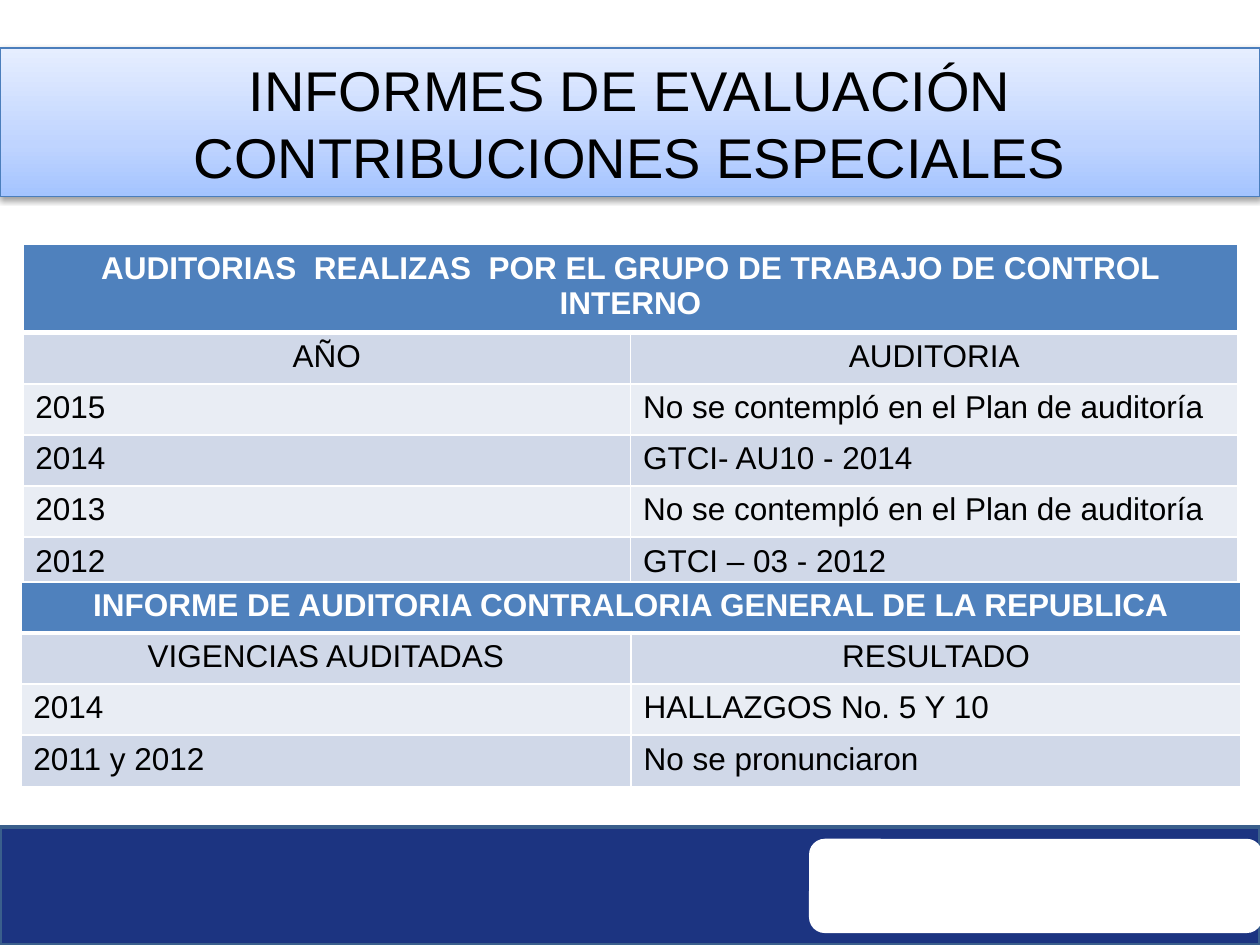
import pptx
import pptx.dml.color
import pptx.enum.shapes
import pptx.enum.text
import pptx.oxml
import pptx.oxml.ns
import pptx.util
from pptx.util import Cm

RGBColor = pptx.dml.color.RGBColor
Align = pptx.enum.text.PP_ALIGN
Shape = pptx.enum.shapes.MSO_SHAPE

WHITE = RGBColor(0xFF, 0xFF, 0xFF)
BLACK = RGBColor(0x00, 0x00, 0x00)
NAVY = RGBColor(0x1C, 0x34, 0x81)
STEEL = RGBColor(0x3A, 0x5F, 0x8C)
TITLE_LINE = RGBColor(0x4B, 0x7E, 0xBC)
HEADER = RGBColor(0x4F, 0x81, 0xBD)
BAND_DARK = RGBColor(0xD0, 0xD8, 0xE8)
BAND_LIGHT = RGBColor(0xE9, 0xED, 0xF4)
TITLE_STOPS = [
    (0, RGBColor(0xA4, 0xC4, 0xFF)),
    (35, RGBColor(0xBF, 0xD4, 0xFF)),
    (100, RGBColor(0xE6, 0xEE, 0xFF)),
]
NAMESPACE = pptx.oxml.ns.nsdecls("a")


def write_text(text_frame, text, size=18, color=BLACK, bold=False, align=Align.LEFT):
    paragraph = text_frame.paragraphs[0]
    paragraph.alignment = align
    run = paragraph.add_run()
    run.text = text
    run.font.name = "Arial"
    run.font.size = pptx.util.Pt(size)
    run.font.bold = bold
    run.font.color.rgb = color


class SlideBuilder:
    """Holds the current slide and draws its elements in one style."""

    def __init__(self, slide):
        self.slide = slide

    def add_box(self, kind, left, top, width, height, fill=None, line=None, line_width=0):
        shape = self.slide.shapes.add_shape(kind, Cm(left), Cm(top), Cm(width), Cm(height))
        shape.shadow.inherit = False
        if fill is not None:
            shape.fill.solid()
            shape.fill.fore_color.rgb = fill
        if line is None:
            shape.line.fill.background()
        else:
            shape.line.color.rgb = line
            shape.line.width = pptx.util.Pt(line_width)
        return shape

    def add_title(self, text, left, top, width, height):
        shape = self.add_box(Shape.RECTANGLE, left, top, width, height,
                             line=TITLE_LINE, line_width=0.75)
        # Three-stop gradient, darkest at the bottom
        shape.fill.gradient()
        shape.fill.gradient_angle = 90
        properties = shape.element.spPr
        stops = properties.find(".//" + pptx.oxml.ns.qn("a:gsLst"))
        for stop in list(stops):
            stops.remove(stop)
        for position, color in TITLE_STOPS:
            stops.append(pptx.oxml.parse_xml(
                f'<a:gs {NAMESPACE} pos="{position * 1000}"><a:srgbClr val="{color}"/></a:gs>'))
        # Soft shadow below
        effects = properties.find(pptx.oxml.ns.qn("a:effectLst"))
        effects.append(pptx.oxml.parse_xml(
            f'<a:outerShdw {NAMESPACE} blurRad="40000" dist="20000" dir="5400000" '
            'rotWithShape="0"><a:srgbClr val="000000"><a:alpha val="38000"/></a:srgbClr>'
            '</a:outerShdw>'))
        shape.text_frame.word_wrap = True
        shape.text_frame.auto_size = pptx.enum.text.MSO_AUTO_SIZE.SHAPE_TO_FIT_TEXT
        write_text(shape.text_frame, text, size=32, align=Align.CENTER)

    def set_borders(self, cell, top=1, bottom=1):
        properties = cell._tc.get_or_add_tcPr()
        for side, width in (("L", 1), ("R", 1), ("T", top), ("B", bottom)):
            properties.append(pptx.oxml.parse_xml(
                f'<a:ln{side} {NAMESPACE} w="{width * 12700}"><a:solidFill>'
                f'<a:srgbClr val="{WHITE}"/></a:solidFill></a:ln{side}>'))

    def add_table(self, heading, rows, left, top, width, row_height=1.03):
        count = len(rows) + 1
        frame = self.slide.shapes.add_table(count, 2, Cm(left), Cm(top), Cm(width),
                                            Cm(row_height * count))
        table = frame.table
        table.horz_banding = False
        for row in table.rows:
            row.height = Cm(row_height)
        for column in table.columns:
            column.width = Cm(width / 2)

        # Heading across both columns
        for cell in table.rows[0].cells:
            self.set_borders(cell, bottom=3)
            cell.fill.solid()
            cell.fill.fore_color.rgb = HEADER
        table.cell(0, 0).merge(table.cell(0, 1))
        write_text(table.cell(0, 0).text_frame, heading, color=WHITE, bold=True,
                   align=Align.CENTER)

        # Banded rows, the first one with centred column names
        for index, texts in enumerate(rows, start=1):
            for column, text in enumerate(texts):
                cell = table.cell(index, column)
                self.set_borders(cell, top=3 if index == 1 else 1)
                cell.fill.solid()
                cell.fill.fore_color.rgb = BAND_DARK if index % 2 else BAND_LIGHT
                write_text(cell.text_frame, text,
                           align=Align.CENTER if index == 1 else Align.LEFT)


def main():
    presentation = pptx.Presentation()
    presentation.slide_width = Cm(25.4)
    presentation.slide_height = Cm(19.05)
    builder = SlideBuilder(presentation.slides.add_slide(presentation.slide_layouts[6]))

    # Footer band
    builder.add_box(Shape.RECTANGLE, 0, 16.67, 25.4, 2.38, NAVY, STEEL, 2)
    builder.add_box(Shape.ROUNDED_RECTANGLE, 16.31, 16.91, 9.14, 1.9, WHITE)

    # Title
    builder.add_title("INFORMES DE EVALUACIÓN CONTRIBUCIONES ESPECIALES", 0, 0.97, 25.4, 2.99)

    # Internal control audits
    not_planned = "No se contempló en el Plan de auditoría"
    builder.add_table(
        "AUDITORIAS  REALIZAS  POR EL GRUPO DE TRABAJO DE CONTROL INTERNO",
        [("AÑO", "AUDITORIA"),
         ("2015", not_planned),
         ("2014", "GTCI- AU10 - 2014"),
         ("2013", not_planned),
         ("2012", "GTCI – 03 - 2012")],
        0.46, 4.93, 24.5)

    # Comptroller audit report
    builder.add_table(
        "INFORME DE AUDITORIA CONTRALORIA GENERAL DE LA REPUBLICA",
        [("VIGENCIAS AUDITADAS", "RESULTADO"),
         ("2014", "HALLAZGOS No. 5 Y 10"),
         ("2011 y 2012", "No se pronunciaron")],
        0.42, 11.73, 24.6)

    presentation.save("out.pptx")


if __name__ == "__main__":
    main()
